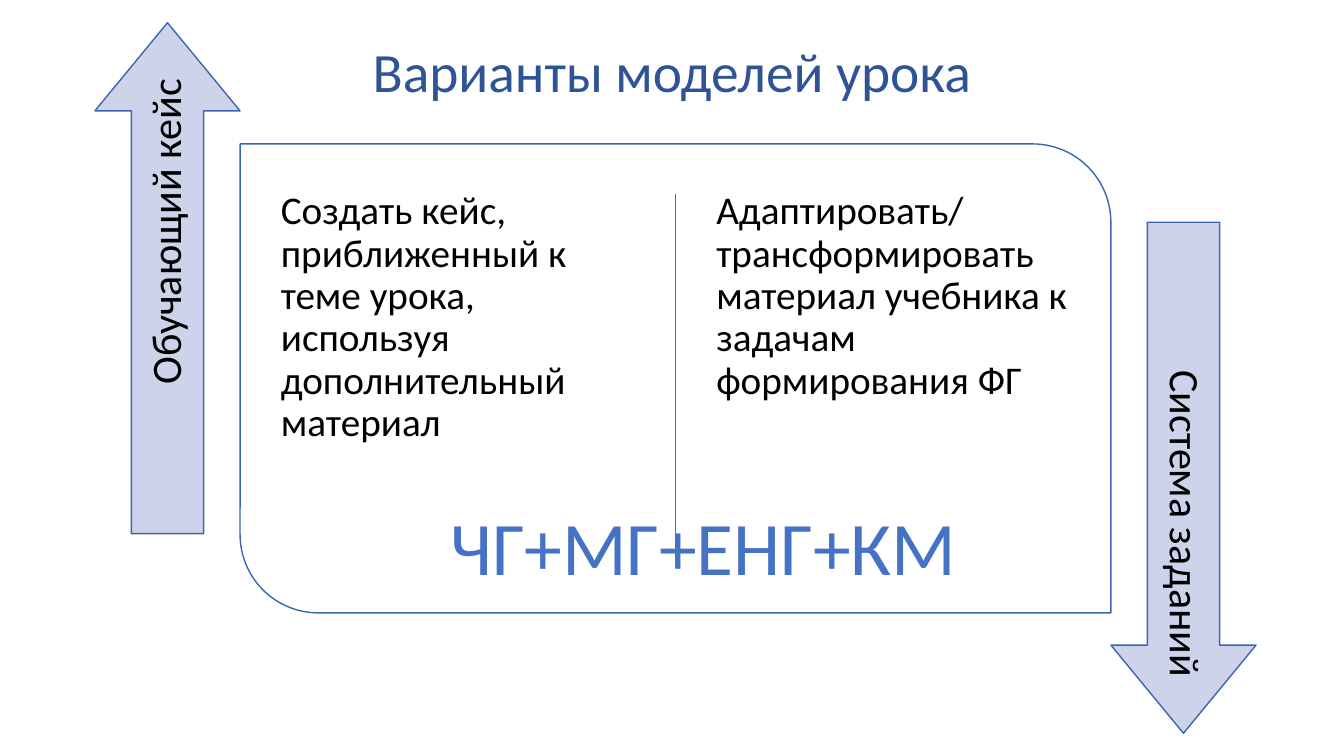
import pptx
import pptx.util
import pptx.dml.color
import pptx.enum.shapes
import pptx.enum.text
import pptx.oxml.ns
import lxml.etree

Pt = pptx.util.Pt
MSO_SHAPE = pptx.enum.shapes.MSO_SHAPE
ALIGN = pptx.enum.text.PP_ALIGN
ANCHOR = pptx.enum.text.MSO_ANCHOR

OUTLINE = "3A66B1"


def color(hex_string):
    return pptx.dml.color.RGBColor.from_string(hex_string)


def set_all(target, values):
    for name, value in values.items():
        setattr(target, name, value)


def add_text(slide, box, words, size, hex_color, insets, align=ALIGN.LEFT,
             anchor=ANCHOR.TOP, spacing=0.9, rotation=0):
    """Wrapped text box; insets are (horizontal, vertical) in points."""
    holder = slide.shapes.add_textbox(*map(Pt, box))
    holder.rotation = rotation
    across, down = map(Pt, insets)
    set_all(holder.text_frame, {
        "word_wrap": True, "vertical_anchor": anchor,
        "margin_left": across, "margin_right": across,
        "margin_top": down, "margin_bottom": down})
    paragraph = holder.text_frame.paragraphs[0]
    set_all(paragraph, {"alignment": align, "line_spacing": spacing})
    run = paragraph.add_run()
    run.text = words
    set_all(run.font, {"name": "Calibri", "size": Pt(size)})
    run.font.color.rgb = color(hex_color)


def add_outlined(slide, kind, box, fill, adjustments, rotation=0):
    shape = slide.shapes.add_shape(kind, *map(Pt, box))
    set_all(shape, {"rotation": rotation})
    shape.shadow.inherit = False
    shape.fill.solid()
    shape.fill.fore_color.rgb = color(fill)
    shape.line.color.rgb = color(OUTLINE)
    shape.line.width = Pt(1)
    for index, value in enumerate(adjustments):
        shape.adjustments[index] = value


def add_models_panel(slide, box, models):
    """Panel with two rounded corners, a divider and a text on each side."""
    left, top, width, height = box
    half = width / 2
    add_outlined(slide, MSO_SHAPE.ROUND_2_DIAG_RECTANGLE, box, "FFFFFF", (0, 0.167))

    # Divider
    middle, start = left + half, top + 35.5
    divider = slide.shapes.add_connector(
        pptx.enum.shapes.MSO_CONNECTOR.STRAIGHT,
        *map(Pt, (middle, start, middle, start + 263.5)))
    divider.line.color.rgb = color("4372C3")
    divider.line.width = Pt(1)
    lxml.etree.SubElement(divider._element.spPr, pptx.oxml.ns.qn("a:effectLst"))

    # Columns
    gutter = 20.5
    for column, model in enumerate(models):
        column_box = (left + column * half + gutter, top + 25, half - 2 * gutter, 284)
        add_text(slide, column_box, model, 28, "000000", (8.64, 8.64))


def add_side_arrow(slide, box, label, rotation):
    """Upright arrow filling the box; 270 points up, 90 points down."""
    left, top, width, height = box
    center_x, center_y = left + width / 2, top + height / 2

    def turned(length, thickness, shift=0):
        return (center_x - length / 2, center_y + shift - thickness / 2,
                length, thickness)

    add_outlined(slide, MSO_SHAPE.RIGHT_ARROW, turned(height, width), "CCD3EA",
                 (0.498, 0.607), rotation)
    toward_tail = 16 if rotation == 270 else -16
    add_text(slide, turned(334, 52, toward_tail), label, 30, "000000",
             (8.64, 8.64), ALIGN.RIGHT, ANCHOR.MIDDLE, rotation=rotation)


def build():
    deck = pptx.Presentation()
    set_all(deck, {"slide_width": Pt(960), "slide_height": Pt(540)})
    slide = deck.slides.add_slide(deck.slide_layouts[6])

    # Title
    add_text(slide, (66, 27.4, 828, 51), "Варианты моделей урока", 39.6, "2F5496",
             (7.2, 3.6), ALIGN.CENTER, ANCHOR.MIDDLE)

    # Lesson models
    panel = (171.5, 102.8, 622, 335)
    add_models_panel(slide, panel, (
        "Создать кейс, приближенный к теме урока, используя дополнительный материал",
        "Адаптировать/ трансформировать материал учебника к задачам формирования ФГ"))

    # Arrows touching the panel on both sides
    arrow_width, arrow_height = 103.7, 365
    add_side_arrow(slide, (panel[0] - arrow_width, 16.2, arrow_width, arrow_height),
                   "Обучающий кейс", 270)
    add_side_arrow(slide, (panel[0] + panel[2], 158.8, arrow_width, arrow_height),
                   "Система заданий", 90)

    # Literacy formula
    add_text(slide, (312.5, 353.5, 380, 72.7), "ЧГ+МГ+ЕНГ+КМ", 54, "4472C4",
             (7.2, 3.6), ALIGN.CENTER, spacing=1.0)

    deck.save("out.pptx")


if __name__ == "__main__":
    build()
